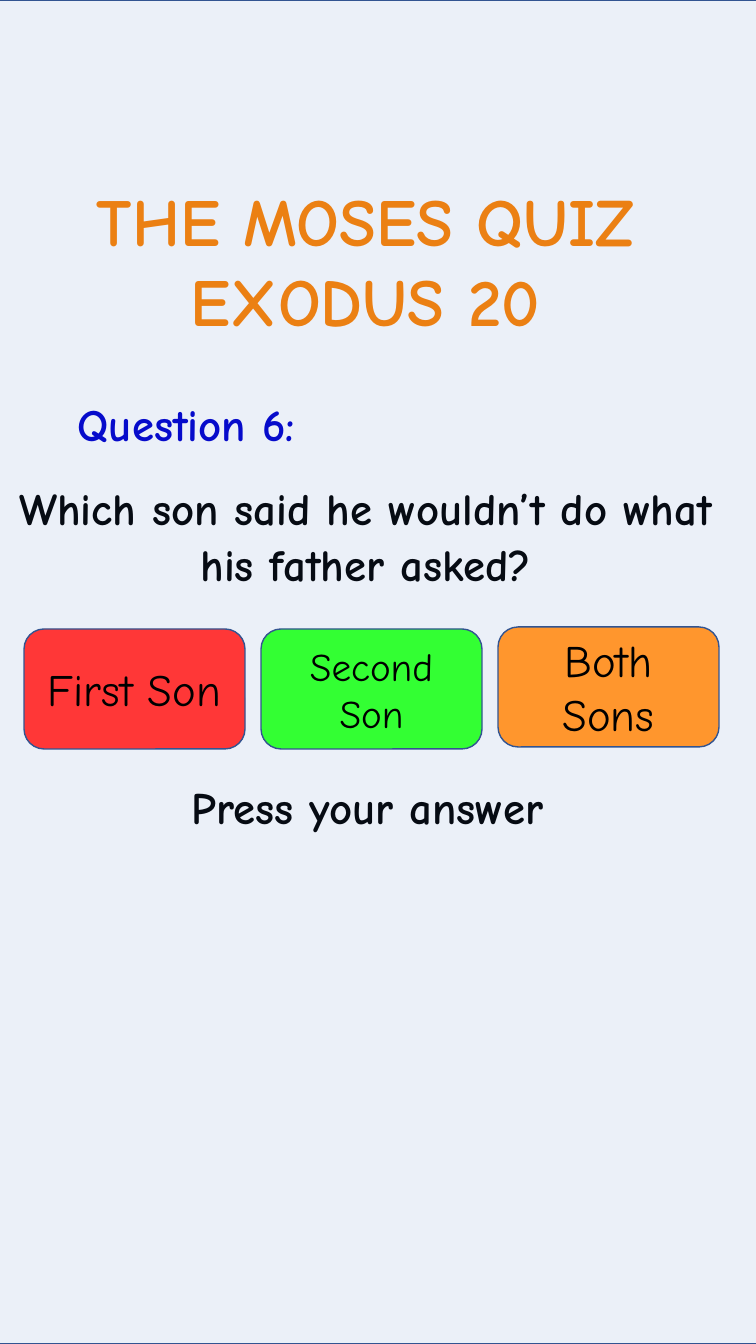
import pptx
import pptx.dml.color
import pptx.enum.shapes
import pptx.enum.text
import pptx.oxml
import pptx.oxml.ns
import pptx.util

PX = 914400 / 100.8
ALIGN = pptx.enum.text.PP_ALIGN
ANCHOR = pptx.enum.text.MSO_ANCHOR
SHAPE = pptx.enum.shapes.MSO_SHAPE


def px(length):
    return pptx.util.Emu(round(length * PX))


def colour(value):
    return pptx.dml.color.RGBColor.from_string(value)


def write(box, text, size=32, ink="000000", bold=False, align=ALIGN.CENTER,
          anchor=ANCHOR.TOP, wrap=True, spacing=1.0, before=0):
    frame = box.text_frame
    frame.word_wrap = wrap
    frame.auto_size = pptx.enum.text.MSO_AUTO_SIZE.NONE
    frame.vertical_anchor = anchor
    frame.text = text
    for para in frame.paragraphs:
        para.alignment = align
        para.line_spacing = spacing
        para.space_before = pptx.util.Pt(before)
        for span in para.runs:
            span.font.name = QuizPage.font
            span.font.size = pptx.util.Pt(size)
            span.font.bold = bold
            span.font.color.rgb = colour(ink)


class QuizPage:
    font = "Comic Neue"
    outline = "325491"

    def __init__(self, deck):
        self.page = deck.slides.add_slide(deck.slide_layouts[5])

    def title(self, area, text, **style):
        box = self.page.shapes.title
        box.left, box.top, box.width, box.height = map(px, area)
        write(box, text, **style)

    def text(self, area, text, **style):
        box = self.page.shapes.add_textbox(*map(px, area))
        write(box, text, bold=True, **style)

    def panel(self, kind, area, fill, opacity=100):
        box = self.page.shapes.add_shape(kind, *map(px, area))
        box.shadow.inherit = False
        box.fill.solid()
        box.fill.fore_color.rgb = colour(fill)
        box.line.color.rgb = colour(self.outline)
        box.line.width = pptx.util.Pt(1)
        if opacity < 100:
            tone = box.fill._xPr.find(".//" + pptx.oxml.ns.qn("a:srgbClr"))
            alpha = pptx.oxml.parse_xml(
                f'<a:alpha {pptx.oxml.ns.nsdecls("a")} val="{opacity * 1000}"/>')
            tone.append(alpha)
        return box

    def button(self, area, text, fill, size):
        write(self.panel(SHAPE.ROUNDED_RECTANGLE, area, fill), text,
              size=size, anchor=ANCHOR.MIDDLE)


def main():
    deck = pptx.Presentation()
    deck.slide_width, deck.slide_height = px(756), px(1344)
    quiz = QuizPage(deck)

    # Heading and question
    quiz.title((30, 174, 695, 173), "THE MOSES QUIZ \nEXODUS 20 ",
               size=48, ink="FF8200", bold=True, wrap=False)
    quiz.text((47, 392, 279, 65), "Question 6:", ink="0000CC", wrap=False)
    quiz.text((0, 474, 732, 164),
              "Which son said he wouldn’t do what his father asked?",
              spacing=pptx.util.Pt(40), before=7.5)
    quiz.text((182, 781, 425, 73), "Press your answer",
              align=ALIGN.LEFT, spacing=0.9, before=7.5)

    # Pale blue tint over the page
    quiz.panel(SHAPE.RECTANGLE, (-12, 0, 815, 1344), "4472C4", opacity=10)

    # Answer buttons
    answers = [("First Son", "FF3737", 32, 629),
               ("Second Son", "33FF33", 28, 629),
               ("Both Sons", "FF962D", 32, 627)]
    for column, (text, fill, size, top) in enumerate(answers):
        quiz.button((24 + 237 * column, top, 221, 120), text, fill, size)

    deck.save("out.pptx")


if __name__ == "__main__":
    main()
